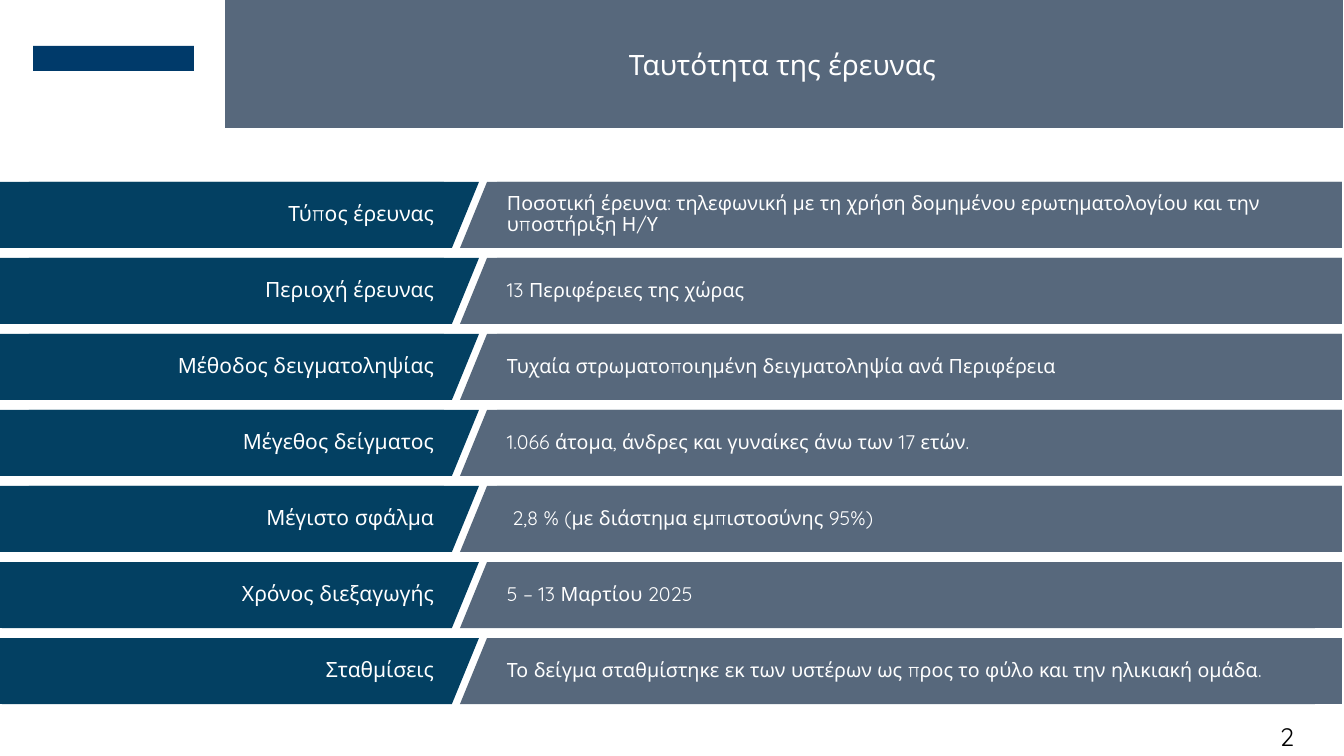
from pptx import Presentation
from pptx import util as u
from pptx.dml.color import RGBColor
from pptx.enum import shapes, text

TITLE = "Ταυτότητα της έρευνας"
PAGE_NUMBER = "2"
ROWS = [
    ("Τύπος έρευνας", "Ποσοτική έρευνα: τηλεφωνική με τη χρήση δομημένου "
                      "ερωτηματολογίου και την υποστήριξη Η/Υ"),
    ("Περιοχή έρευνας", "13 Περιφέρειες της χώρας"),
    ("Μέθοδος δειγματοληψίας", "Τυχαία στρωματοποιημένη δειγματοληψία ανά Περιφέρεια"),
    ("Μέγεθος δείγματος", "1.066 άτομα, άνδρες και γυναίκες άνω των 17 ετών."),
    ("Μέγιστο σφάλμα", " 2,8 % (με διάστημα εμπιστοσύνης 95%)"),
    ("Χρόνος διεξαγωγής", "5 – 13 Μαρτίου 2025"),
    ("Σταθμίσεις", "Το δείγμα σταθμίστηκε εκ των υστέρων ως προς το φύλο και την ηλικιακή ομάδα."),
]
FONT = "Quicksand"
NAVY, SLATE, WHITE, BLACK, LOGO = "034062", "57687C", "FFFFFF", "000000", "003A6A"
ROW_TOP, ROW_PITCH, ROW_HEIGHT, SLANT = 182, 76, 66, 0.41
LEFT, CENTER, RIGHT = text.PP_ALIGN.LEFT, text.PP_ALIGN.CENTER, text.PP_ALIGN.RIGHT
SLANTED, RECT = shapes.MSO_SHAPE.PARALLELOGRAM, shapes.MSO_SHAPE.RECTANGLE


def px(*lengths):
    return [u.Emu(round(n * 914400 / 100.8)) for n in lengths]


def color(code):
    return RGBColor.from_string(code)


def add_block(parent, kind, at, fill, slant=None):
    block = parent.add_shape(kind, *px(*at))
    block.shadow.inherit = False
    block.fill.solid()
    block.fill.fore_color.rgb = color(fill)
    block.line.fill.background()
    if slant is not None:
        block.adjustments[0] = slant
    return block


def write(box, words, size, align=LEFT, code=WHITE, spacing=1.0):
    frame = box.text_frame
    frame.word_wrap = True
    frame.vertical_anchor = text.MSO_ANCHOR.MIDDLE
    para = frame.paragraphs[0]
    para.text = words
    para.alignment = align
    para.line_spacing = spacing
    para.font.name = FONT
    para.font.size = u.Pt(size)
    para.font.color.rgb = color(code)


deck = Presentation()
deck.slide_width, deck.slide_height = px(1344, 756)
page = deck.slides.add_slide(deck.slide_layouts[5])

# Rows: slanted label and description bars, each with a text block on top
for index, (label, description) in enumerate(ROWS):
    top = ROW_TOP + index * ROW_PITCH
    row = page.shapes.add_group_shape().shapes
    add_block(row, SLANTED, (2, top, 477, ROW_HEIGHT), NAVY, SLANT)
    add_block(row, SLANTED, (460, top, 882, ROW_HEIGHT), SLATE, SLANT)
    label_box = add_block(row, RECT, (0, top, 444, ROW_HEIGHT), NAVY)
    write(label_box, label, 15, RIGHT, spacing=0.9)
    description_box = add_block(row, RECT, (497, top, 845, ROW_HEIGHT), SLATE)
    write(description_box, description, 14, spacing=0.9)

# Header band with the title in front of it
band = add_block(page.shapes, SLANTED, (225, -1, 1118, 129), SLATE, 0)
title = page.shapes.title
title.left, title.top, title.width, title.height = px(224, 42, 1117, 44)
write(title, TITLE, 20, CENTER)
band.element.addnext(title.element)

# Plain block in the logo's place
add_block(page.shapes, RECT, (33, 46, 161, 25), LOGO)

# Page number
number_box = page.shapes.add_textbox(*px(1270, 716, 74, 40))
write(number_box, PAGE_NUMBER, 18, code=BLACK)

deck.save("out.pptx")
